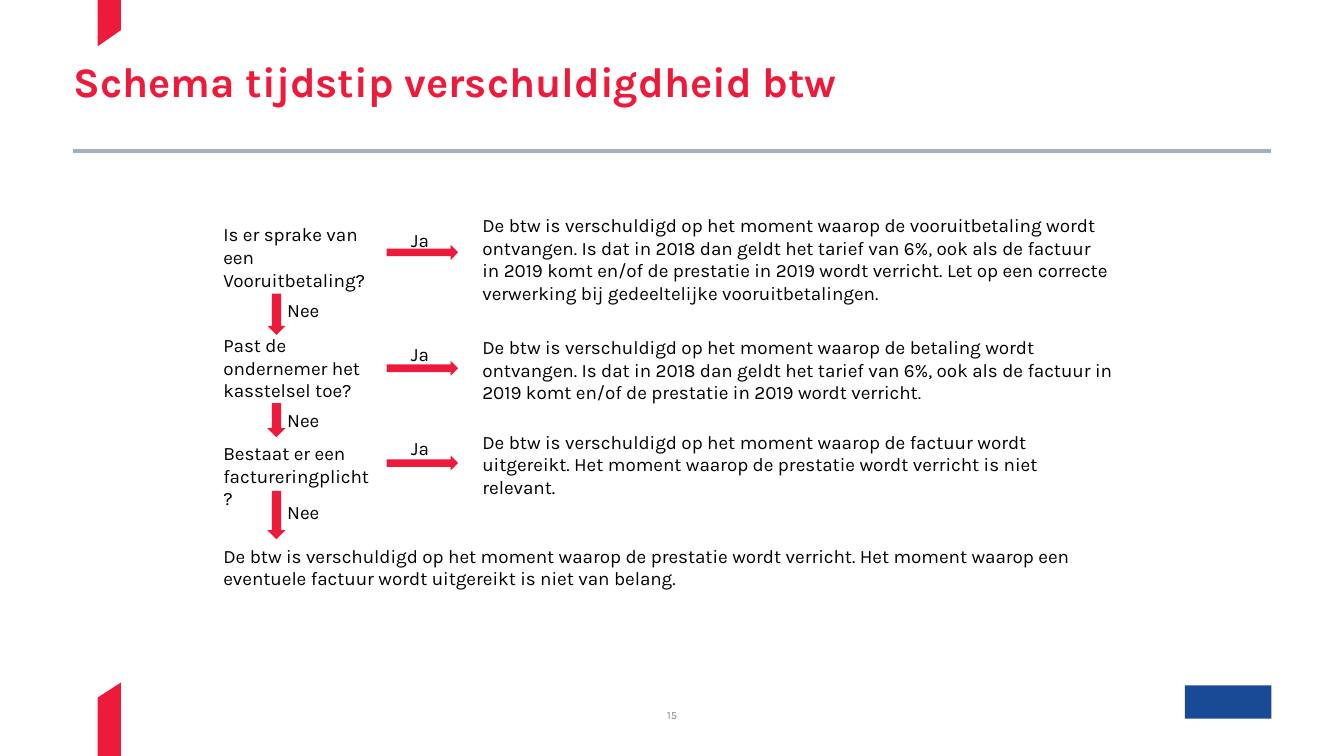
from pptx import Presentation, util as u
from pptx.dml.color import RGBColor
from pptx.enum import shapes, text

COLORS = {"red": "ED1A3B", "accent": "EE1A3B", "rule": "A3B0C0",
          "black": "000000", "grey": "8C8C8C", "blue": "194A95"}
FONT = "Karla"
TITLE = "Schema tijdstip verschuldigdheid btw"
STEPS = [
    {"question": "Is er sprake van een Vooruitbetaling?",
     "answer": "De btw is verschuldigd op het moment waarop de vooruitbetaling wordt ontvangen. "
               "Is dat in 2018 dan geldt het tarief van 6%, ook als de factuur in 2019 komt en/of "
               "de prestatie in 2019 wordt verricht. Let op een correcte verwerking bij "
               "gedeeltelijke vooruitbetalingen.",
     "question_top": 5.49, "answer_top": 5.26, "answer_width": 16.33, "answer_height": 3.15,
     "yes_top": 5.64, "yes_arrow_top": 6.17,
     "no_top": 7.39, "no_arrow_top": 7.4, "no_arrow_height": 1.04},
    {"question": "Past de ondernemer het kasstelsel toe?",
     "answer": "De btw is verschuldigd op het moment waarop de betaling wordt ontvangen. "
               "Is dat in 2018 dan geldt het tarief van 6%, ook als de factuur in 2019 komt en/of "
               "de prestatie in 2019 wordt verricht.",
     "question_top": 8.28, "answer_top": 8.33, "answer_width": 16.54, "answer_height": 1.98,
     "yes_top": 8.51, "yes_arrow_top": 9.09,
     "no_top": 10.16, "no_arrow_top": 10.16, "no_arrow_height": 0.86},
    {"question": "Bestaat er een factureringplicht?",
     "answer": "De btw is verschuldigd op het moment waarop de factuur wordt uitgereikt. "
               "Het moment waarop de prestatie wordt verricht is niet relevant.",
     "question_top": 11, "answer_top": 10.72, "answer_width": 16.33, "answer_height": 2.36,
     "yes_top": 10.87, "yes_arrow_top": 11.48,
     "no_top": 12.5, "no_arrow_top": 12.37, "no_arrow_height": 1.22},
]
CONCLUSION = ("De btw is verschuldigd op het moment waarop de prestatie wordt verricht. "
              "Het moment waarop een eventuele factuur wordt uitgereikt is niet van belang.")
PAGE_NUMBER = "15"
RIBBONS = [
    [(2.46, 0), (3.05, 0), (3.05, 0.76), (2.46, 1.17)],
    [(3.05, 17.2), (3.05, 19.05), (2.46, 19.05), (2.46, 17.58)],
]

QUESTION_LEFT, ANSWER_LEFT = 5.38, 11.91
YES_ARROW_LEFT, YES_LEFT = 9.75, 10.11
NO_ARROW_LEFT, NO_LEFT = 6.74, 6.99

deck = Presentation()
deck.slide_width, deck.slide_height = u.Cm(33.88), u.Cm(19.05)
slide = deck.slides.add_slide(deck.slide_layouts[5])


def rgb(name):
    return RGBColor.from_string(COLORS[name])


def write(frame, words, size=13.5, color="black", bold=False,
          align=text.PP_ALIGN.LEFT, anchor=text.MSO_ANCHOR.TOP):
    frame.word_wrap = True
    frame.vertical_anchor = anchor
    paragraph = frame.paragraphs[0]
    paragraph.alignment = align
    run = paragraph.add_run()
    run.text = words
    run.font.name, run.font.size, run.font.bold = FONT, u.Pt(size), bold
    run.font.color.rgb = rgb(color)


def label(words, left, top, width, height, **style):
    box = slide.shapes.add_textbox(*map(u.Cm, (left, top, width, height)))
    write(box.text_frame, words, **style)


def paint(shape, color):
    shape.shadow.inherit = False
    shape.fill.solid()
    shape.fill.fore_color.rgb = rgb(color)
    shape.line.fill.background()


def block(kind, left, top, width, height, color="red"):
    paint(slide.shapes.add_shape(kind, *map(u.Cm, (left, top, width, height))), color)


for ribbon in RIBBONS:
    outline = [(u.Cm(x), u.Cm(y)) for x, y in ribbon]
    builder = slide.shapes.build_freeform(*outline[0])
    builder.add_line_segments(outline[1:], close=True)
    paint(builder.convert_to_shape(), "accent")

block(shapes.MSO_SHAPE.RECTANGLE, 29.87, 17.27, 2.18, 0.84, "blue")

rule = slide.shapes.add_connector(shapes.MSO_CONNECTOR.STRAIGHT,
                                  u.Cm(1.85), u.Cm(3.8), u.Cm(32.05), u.Cm(3.8))
rule.line.color.rgb = rgb("rule")
rule.line.width = u.Pt(3)
properties = rule._element.spPr
properties.append(properties.makeelement(
    "{http://schemas.openxmlformats.org/drawingml/2006/main}effectLst", {}))

title = slide.shapes.title
title.left, title.top, title.width, title.height = map(u.Cm, (1.85, 1.3, 30.2, 1.47))
heading = title.text_frame
heading.margin_left = heading.margin_top = heading.margin_right = heading.margin_bottom = 0
write(heading, TITLE, size=30, color="red", bold=True, anchor=text.MSO_ANCHOR.MIDDLE)

for step in STEPS:
    label(step["question"], QUESTION_LEFT, step["question_top"], 4.34, 1.98)
    label(step["answer"], ANSWER_LEFT, step["answer_top"],
          step["answer_width"], step["answer_height"])
    block(shapes.MSO_SHAPE.RIGHT_ARROW, YES_ARROW_LEFT, step["yes_arrow_top"], 1.8, 0.38)
    label("Ja", YES_LEFT, step["yes_top"], 1.04, 0.84)
    block(shapes.MSO_SHAPE.DOWN_ARROW, NO_ARROW_LEFT, step["no_arrow_top"],
          0.46, step["no_arrow_height"])
    label("Nee", NO_LEFT, step["no_top"], 2, 0.84)

label(CONCLUSION, QUESTION_LEFT, 13.59, 23.06, 1.42)
label(PAGE_NUMBER, 16.03, 17.5, 1.83, 1.02, size=8, color="grey",
      align=text.PP_ALIGN.CENTER, anchor=text.MSO_ANCHOR.MIDDLE)

deck.save("out.pptx")
